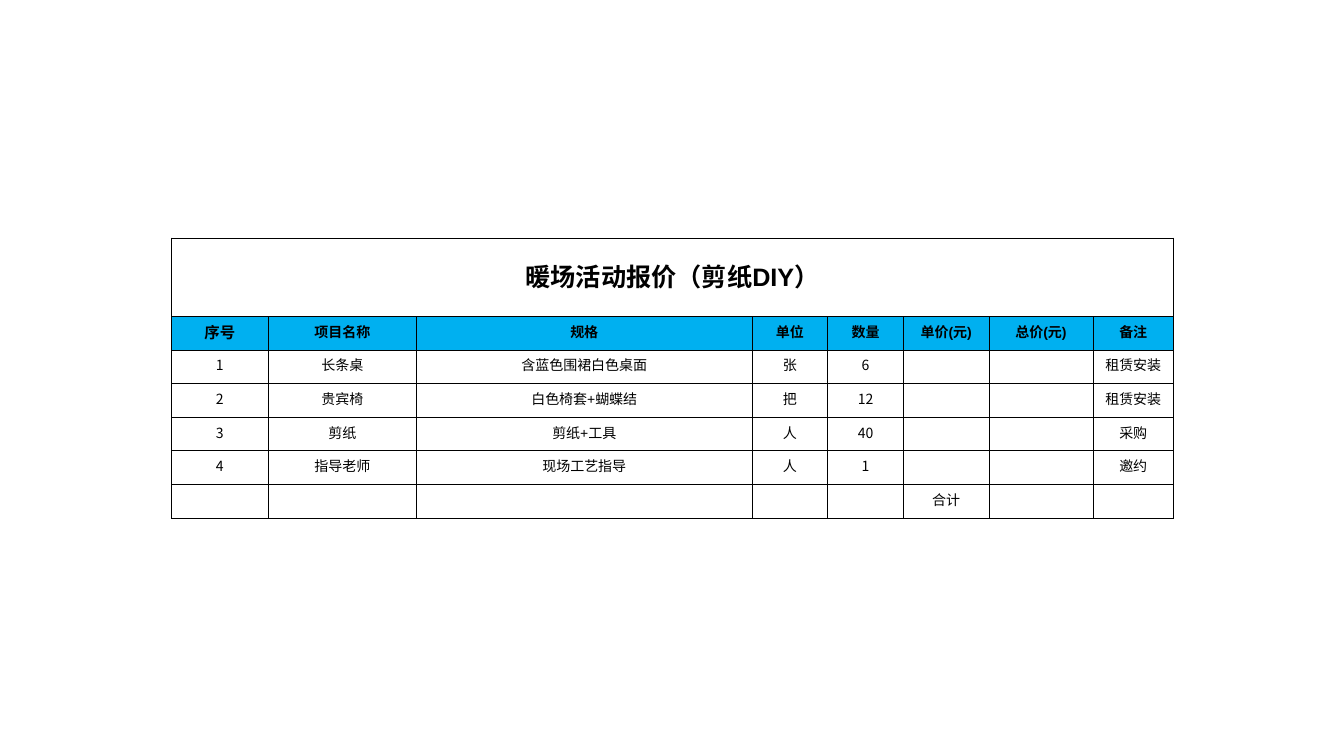
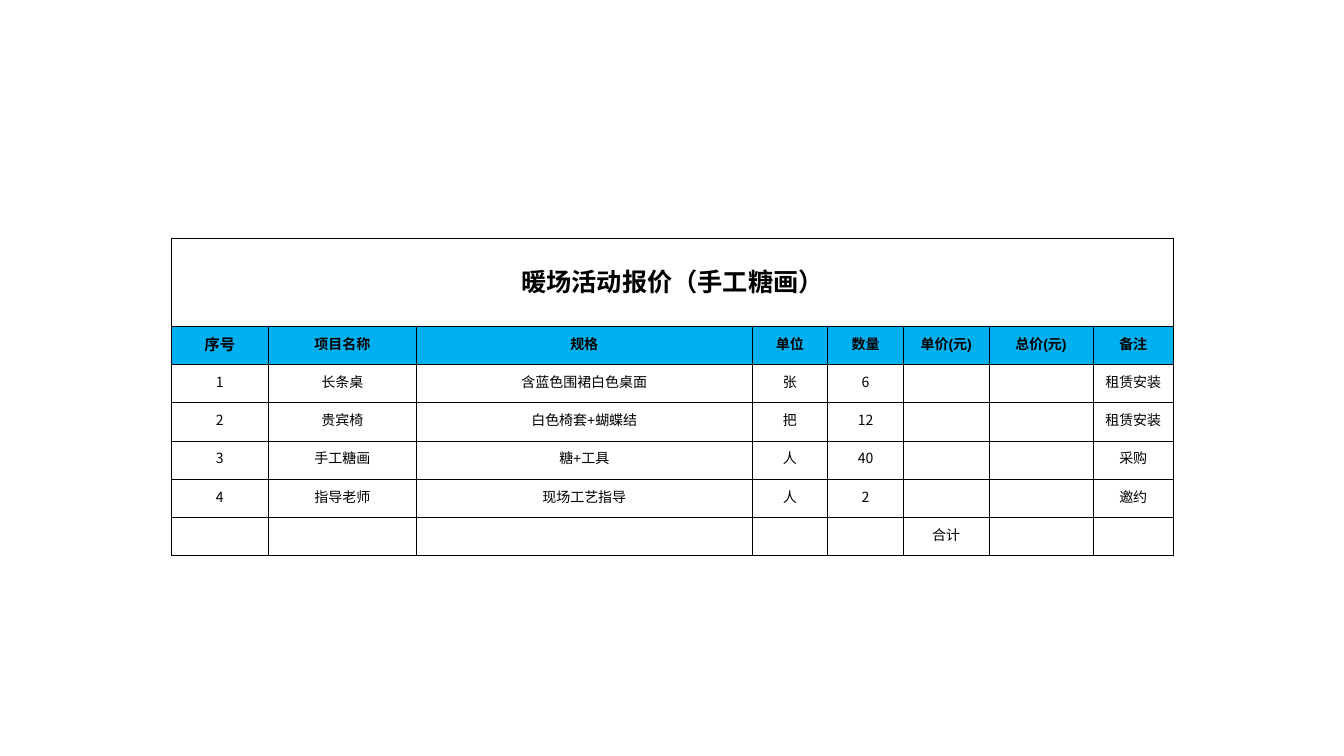
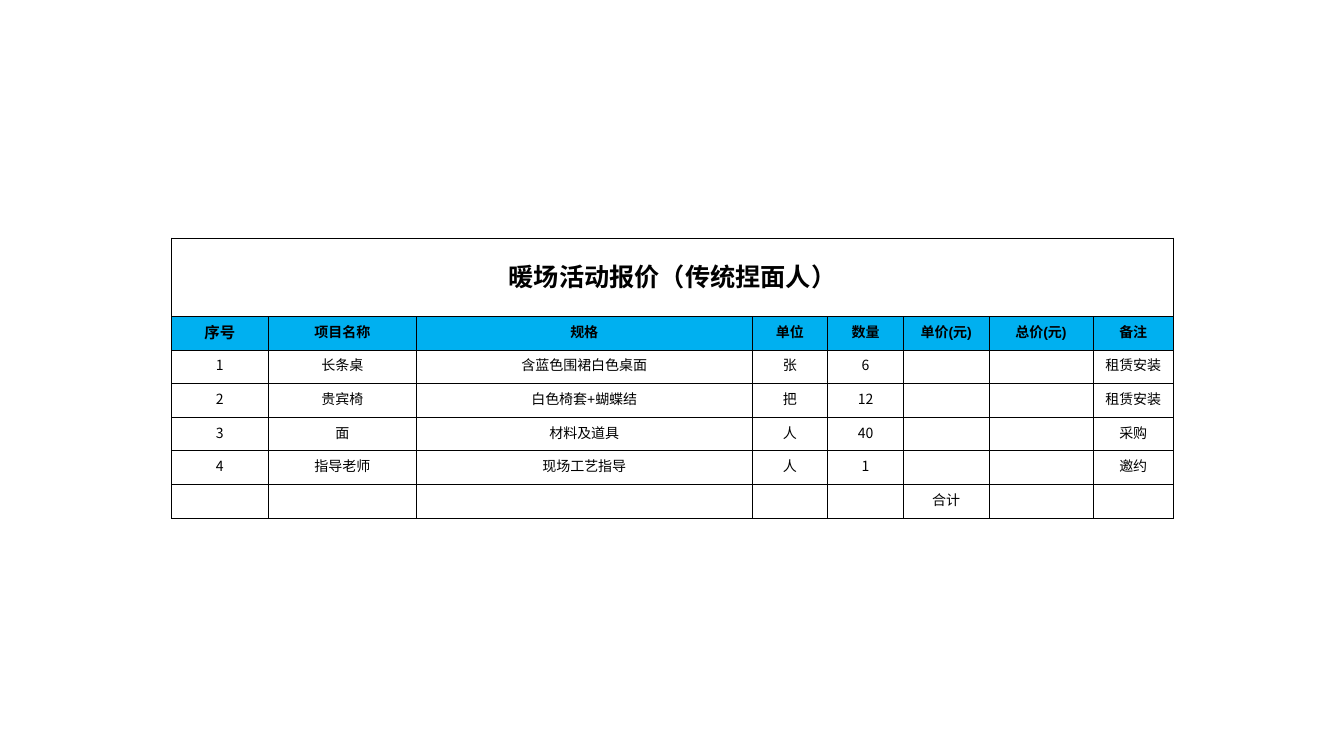
from lxml.etree import SubElement
from pptx import Presentation
from pptx.dml.color import RGBColor
from pptx.enum.text import MSO_ANCHOR as ANCHOR, PP_ALIGN as ALIGN
from pptx.oxml.ns import qn
from pptx.util import Inches, Pt

BLACK = RGBColor(0x00, 0x00, 0x00)
WHITE = RGBColor(0xFF, 0xFF, 0xFF)
HEADER_BLUE = RGBColor(0x00, 0xB0, 0xF0)
LATIN_FONT = "Arial"
CJK_FONT = "Noto Sans CJK SC"

# Shared table layout and wording
LEFT, TOP = 1.7, 2.36
COLUMN_WIDTHS = [0.96, 1.47, 3.33, 0.75, 0.75, 0.85, 1.03, 0.8]
HEADINGS = ["序号", "项目名称", "规格", "单位", "数量", "单价(元)", "总价(元)", "备注"]
TOTAL_ROW = ["", "", "", "", "", "合计", "", ""]
MARGINS = {"margin_left": 0.01, "margin_top": 0.01, "margin_right": 0.01, "margin_bottom": 0.05}

# Activity, craft item, its specification, number of teachers, title height, table height
QUOTES = [
    ("剪纸DIY", "剪纸", "剪纸+工具", "1", 0.78, 2.78),
    ("手工糖画", "手工糖画", "糖+工具", "2", 0.88, 3.15),
    ("传统捏面人", "面", "材料及道具", "1", 0.78, 2.78),
]


def add_borders(cell):
    properties = cell._tc.get_or_add_tcPr()
    for side in ("lnL", "lnR", "lnT", "lnB"):
        line = SubElement(properties, qn(f"a:{side}"), w=str(Pt(0.5)))
        SubElement(SubElement(line, qn("a:solidFill")), qn("a:srgbClr"), val=str(BLACK))


def format_cell(cell, text, size, bold, fill):
    add_borders(cell)
    cell.fill.solid()
    cell.fill.fore_color.rgb = fill
    for margin, inches in MARGINS.items():
        setattr(cell, margin, Inches(inches))
    cell.vertical_anchor = ANCHOR.MIDDLE
    paragraph = cell.text_frame.paragraphs[0]
    paragraph.alignment = ALIGN.CENTER
    if not text:
        # Keeps empty cells from stretching their row
        SubElement(paragraph._p, qn("a:endParaRPr"), sz=str(size * 100))
        return
    run = paragraph.add_run()
    run.text = text
    name = CJK_FONT if text.isdigit() else LATIN_FONT
    for attribute, value in {"size": Pt(size), "bold": bold, "name": name}.items():
        setattr(run.font, attribute, value)
    run.font.color.rgb = BLACK
    SubElement(run._r.get_or_add_rPr(), qn("a:ea"), typeface=CJK_FONT)


prs = Presentation()
prs.slide_width, prs.slide_height = Inches(13.33), Inches(7.5)
blank_layout = prs.slide_layouts[6]

for activity, craft, craft_spec, teachers, title_height, table_height in QUOTES:
    slide = prs.slides.add_slide(blank_layout)
    rows = [
        [f"暖场活动报价（{activity}）"] + [""] * (len(HEADINGS) - 1),
        HEADINGS,
        ["1", "长条桌", "含蓝色围裙白色桌面", "张", "6", "", "", "租赁安装"],
        ["2", "贵宾椅", "白色椅套+蝴蝶结", "把", "12", "", "", "租赁安装"],
        ["3", craft, craft_spec, "人", "40", "", "", "采购"],
        ["4", "指导老师", "现场工艺指导", "人", teachers, "", "", "邀约"],
        TOTAL_ROW,
    ]
    quote = slide.shapes.add_table(
        len(rows), len(HEADINGS), Inches(LEFT), Inches(TOP),
        Inches(sum(COLUMN_WIDTHS)), Inches(table_height)).table

    # Column widths, and equal rows below the title
    for column, width in zip(quote.columns, COLUMN_WIDTHS):
        column.width = Inches(width)
    row_height = (table_height - title_height) / (len(rows) - 1)
    for r, row in enumerate(quote.rows):
        row.height = Inches(row_height if r else title_height)

    # Title across the table, blue headings, then the items
    quote.cell(0, 0).merge(quote.cell(0, len(HEADINGS) - 1))
    for r, texts in enumerate(rows):
        for c, text in enumerate(texts):
            size = 18 if r == 0 else 11 if (r, c) == (1, 0) else 10
            fill = HEADER_BLUE if r == 1 else WHITE
            format_cell(quote.cell(r, c), text, size, r < 2, fill)

prs.save("out.pptx")
